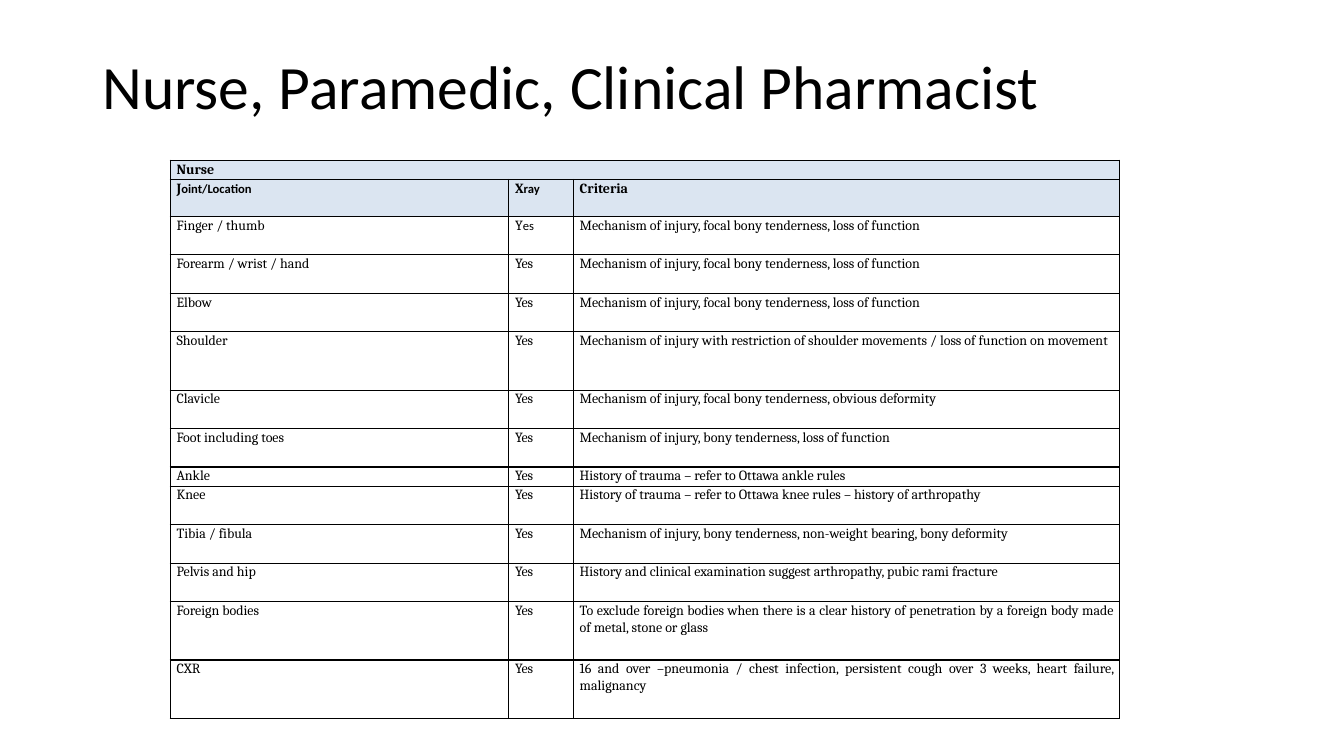
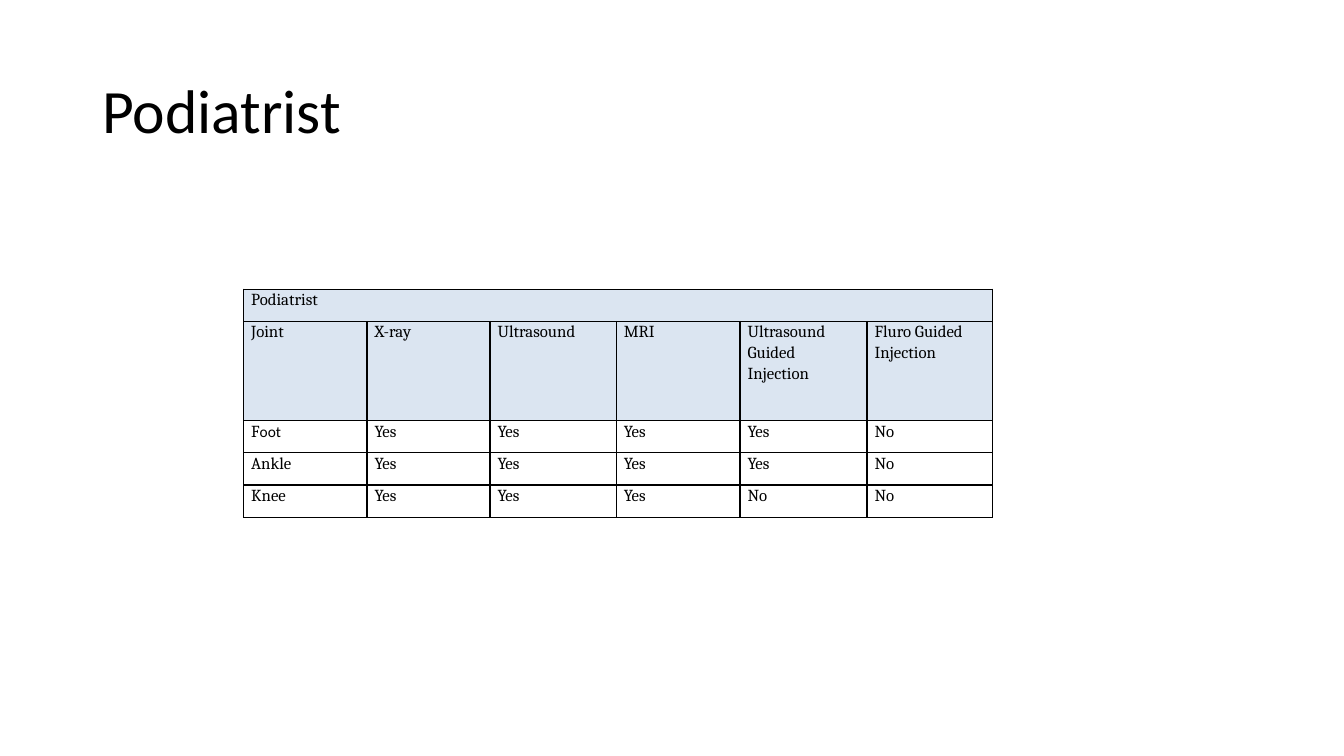
import pptx
import pptx.util
import pptx.dml.color
import pptx.enum.text
import pptx.oxml
import pptx.oxml.ns

Cm, Pt = pptx.util.Cm, pptx.util.Pt
ALIGN = pptx.enum.text.PP_ALIGN
HUES = {"ink": "000000", "head": "DBE5F1"}
BONY = "Mechanism of injury, focal bony tenderness, "

# Content: a tuple in a cell is a lead letter and a tail in the second font
NURSE = [
    ["Nurse"],
    [("J", "oint/Location"), ("X", "ray"), "Criteria"],
    ["Finger / thumb", ("Y", "es"), BONY + "loss of function"],
    ["Forearm / wrist / hand", "Yes", BONY + "loss of function"],
    ["Elbow", "Yes", BONY + "loss of function"],
    ["Shoulder", "Yes", "Mechanism of injury with restriction of shoulder "
     "movements / loss of function on movement"],
    ["Clavicle", "Yes", BONY + "obvious deformity"],
    ["Foot including toes", "Yes",
     "Mechanism of injury, bony tenderness, loss of function"],
    ["Ankle", "Yes", "History of trauma – refer to Ottawa ankle rules"],
    ["Knee", "Yes",
     "History of trauma – refer to Ottawa knee rules – history of arthropathy"],
    ["Tibia / fibula", "Yes", "Mechanism of injury, bony tenderness, "
     "non-weight bearing, bony deformity"],
    ["Pelvis and hip", "Yes", "History and clinical examination suggest "
     "arthropathy, pubic rami fracture"],
    ["Foreign bodies", "Yes", "To exclude foreign bodies when there is a clear "
     "history of penetration by a foreign body made of metal, stone or glass"],
    ["CXR", "Yes", "16 and over –pneumonia / chest infection, persistent cough "
     "over 3 weeks, heart failure, malignancy"],
]
FOOT = [
    ["Podiatrist"],
    ["Joint", "X-ray", "Ultrasound", "MRI", "Ultrasound Guided Injection",
     "Fluro Guided Injection"],
    [("F", "oot"), "Yes", "Yes", "Yes", "Yes", "No"],
    ["Ankle", "Yes", "Yes", "Yes", "Yes", "No"],
    ["Knee", "Yes", "Yes", "Yes", "No", "No"],
]

# Lengths in cm; "tall" lists the rows that differ from the usual height
SLIDES = [
    dict(title="Nurse, Paramedic, Clinical Pharmacist", high=2.49, rows=NURSE,
         at=(4.29, 4.04), cols=(8.53, 1.63, 13.77), usual=0.97,
         tall={0: 0.48, 1: 0.93, 5: 1.47, 8: 0.48, 12: 1.47, 13: 1.47},
         pad=0.16, strong=True,
         look=dict(size=10, tail=9, after=10, align=ALIGN.JUSTIFY)),
    dict(title="Podiatrist", high=3.68, rows=FOOT,
         at=(6.14, 7.29), cols=(3.11, 3.1, 3.18, 3.12, 3.2, 3.17), usual=0.81,
         tall={1: 2.5}, pad=0.19, strong=False,
         look=dict(size=12, tail=11, after=8, align=ALIGN.LEFT)),
]


def color(name):
    return pptx.dml.color.RGBColor.from_string(HUES[name])


def write(frame, text, size, font="Cambria", tail=None, bold=False,
          align=ALIGN.LEFT, space=1.07, after=0):
    """Fill a text frame with one paragraph."""
    frame.word_wrap = True
    para = frame.paragraphs[0]
    para.alignment, para.line_spacing = align, space
    para.space_after = Pt(after)
    parts = text if isinstance(text, tuple) else (text,)
    for part, face, points in zip(parts, (font, "Calibri"), (size, tail)):
        run = para.add_run()
        run.text = part
        run.font.name, run.font.size = face, Pt(points)
        run.font.bold = bold
        run.font.color.rgb = color("ink")


def edge(cell):
    """Draw a thin line on all four sides of a cell."""
    props = cell._tc.get_or_add_tcPr()
    space = pptx.oxml.ns.nsdecls("a")
    for spot, side in enumerate("LRTB"):
        props.insert(spot, pptx.oxml.parse_xml(
            f'<a:ln{side} {space} w="12700"><a:solidFill>'
            f'<a:srgbClr val="{HUES["ink"]}"/></a:solidFill></a:ln{side}>'))


def grid(slide, rows, at, cols, usual, tall, pad, strong, look):
    """Add a table whose first row spans it and whose top two are headings."""
    highs = [tall.get(i, usual) for i in range(len(rows))]
    table = slide.shapes.add_table(
        len(rows), len(cols), Cm(at[0]), Cm(at[1]),
        Cm(sum(cols)), Cm(sum(highs))).table
    table.first_row = table.horz_banding = False
    for col, wide in zip(table.columns, cols):
        col.width = Cm(wide)
    for i, (row, high) in enumerate(zip(table.rows, highs)):
        row.height = Cm(high)
        head = i < 2
        for cell in row.cells:
            cell.margin_left = cell.margin_right = Cm(pad)
            cell.margin_top = cell.margin_bottom = 0
            if head:
                cell.fill.solid()
                cell.fill.fore_color.rgb = color("head")
            else:
                cell.fill.background()
            edge(cell)
        for cell, text in zip(row.cells, rows[i]):
            write(cell.text_frame, text, bold=head and strong, **look)
    table.cell(0, 0).merge(table.cell(0, len(cols) - 1))


def page(deck, title, high, **table):
    slide = deck.slides.add_slide(deck.slide_layouts[6])
    box = slide.shapes.add_textbox(Cm(2.33), Cm(1.02), Cm(29.21), Cm(high))
    box.text_frame.vertical_anchor = pptx.enum.text.MSO_ANCHOR.MIDDLE
    write(box.text_frame, title, 44, font="Calibri", space=0.9)
    grid(slide, **table)


def main():
    deck = pptx.Presentation()
    deck.slide_width, deck.slide_height = Cm(33.87), Cm(19.05)
    for item in SLIDES:
        page(deck, **item)
    deck.save("out.pptx")


if __name__ == "__main__":
    main()
